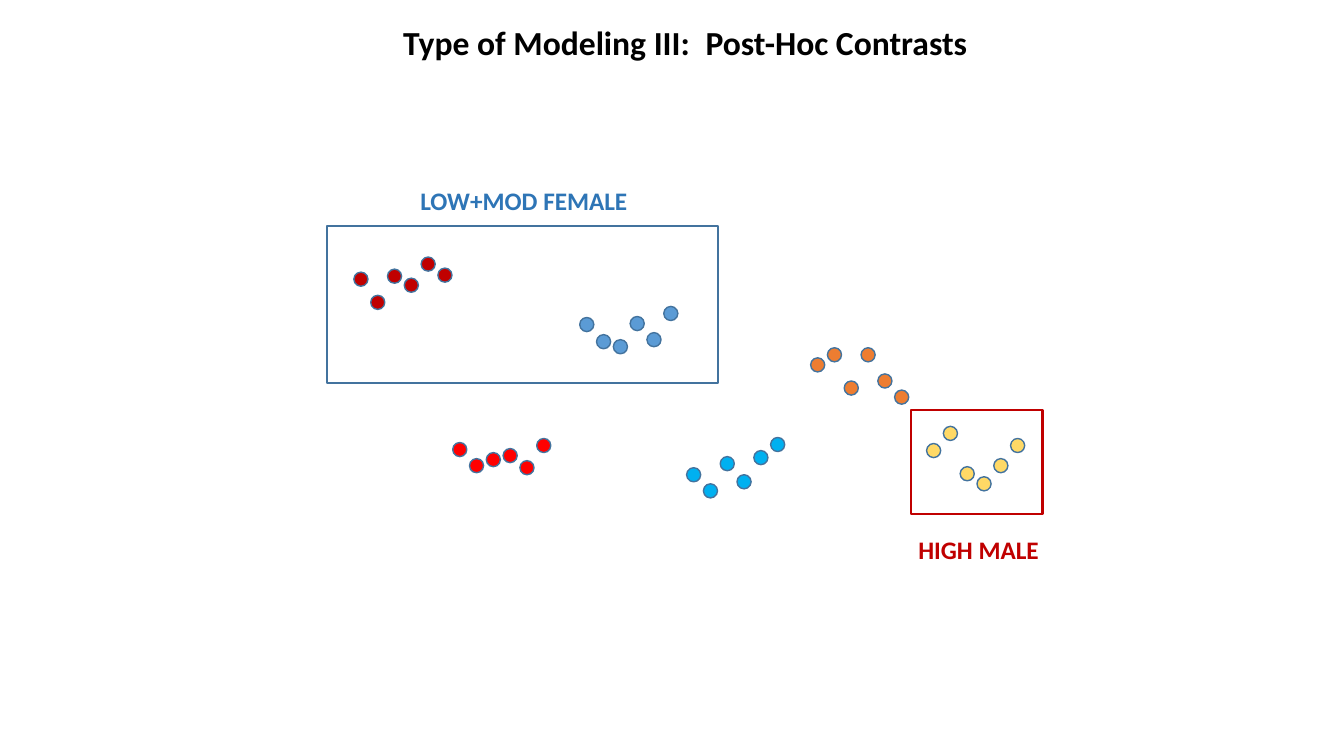
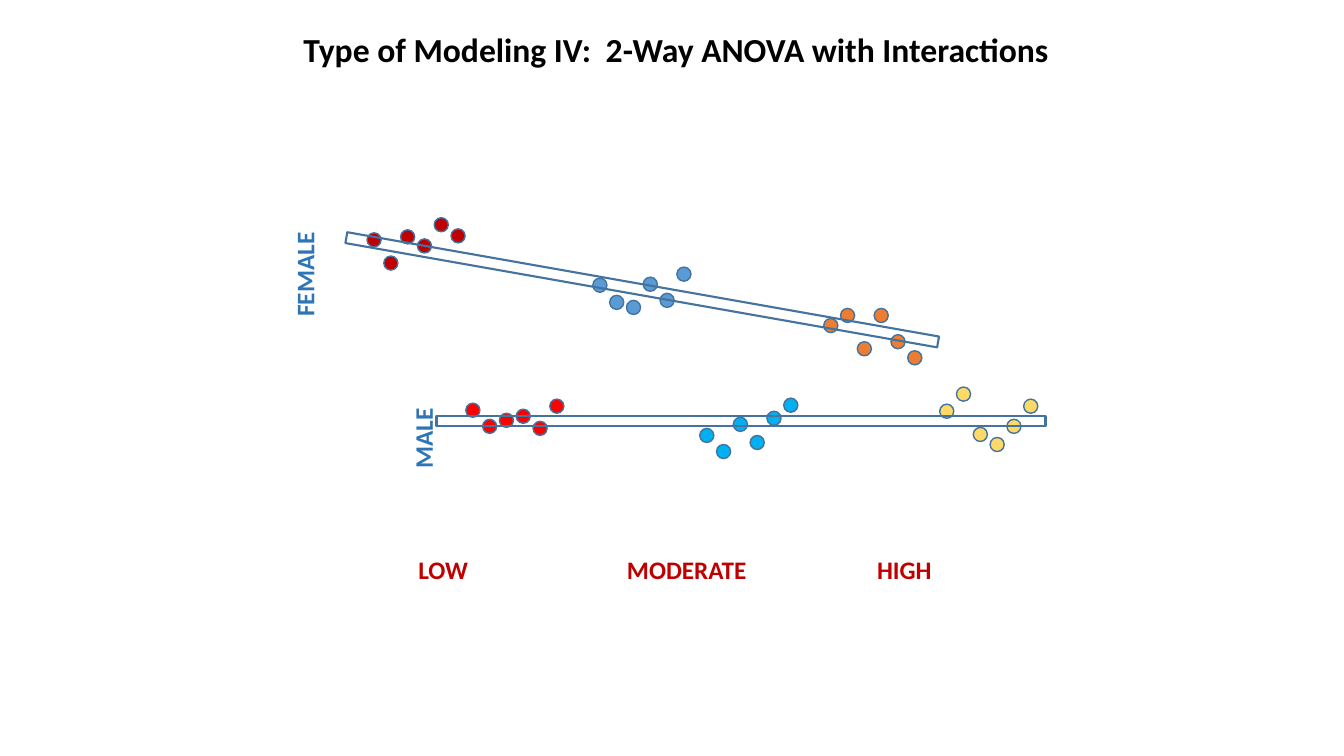
from dataclasses import dataclass

import pptx
import pptx.dml.color
import pptx.enum.shapes
import pptx.enum.text
import pptx.util
from lxml import etree
from pptx.oxml.ns import qn

Inches = pptx.util.Inches
RGBColor = pptx.dml.color.RGBColor
Shape = pptx.enum.shapes.MSO_SHAPE

FONT = "Calibri"
BLACK = RGBColor(0x00, 0x00, 0x00)
OUTLINE = RGBColor(0x43, 0x73, 0x9E)
LABEL_BLUE = RGBColor(0x2E, 0x75, 0xB6)
DARK_RED = RGBColor(0xC0, 0x00, 0x00)
RED = RGBColor(0xFF, 0x00, 0x00)
MID_BLUE = RGBColor(0x5B, 0x9B, 0xD5)
SKY_BLUE = RGBColor(0x00, 0xB0, 0xF0)
ORANGE = RGBColor(0xED, 0x7D, 0x31)
YELLOW = RGBColor(0xFF, 0xD9, 0x66)

DOT_SIZE = 0.14
DOT_STEP = 1 / 6


@dataclass(frozen=True)
class Cluster:
    color: RGBColor
    left: float
    tops: tuple[float, ...]


@dataclass(frozen=True)
class Frame:
    left: float
    top: float
    width: float
    height: float
    color: RGBColor = OUTLINE
    rotation: float = 0


@dataclass(frozen=True)
class Label:
    text: str
    left: float
    top: float
    width: float
    color: RGBColor
    height: float = 0.4
    size: int = 18
    rotation: float = 0
    wrap: bool = True
    tabs: tuple[float, ...] = ()


# Observations, evenly spaced from left to right within each cluster
CLUSTERS = (
    Cluster(MID_BLUE, 5.75, (3.15, 3.32, 3.37, 3.14, 3.3, 3.04)),
    Cluster(ORANGE, 8.04, (3.55, 3.45, 3.78, 3.45, 3.71, 3.87)),
    Cluster(DARK_RED, 3.51, (2.7, 2.93, 2.67, 2.76, 2.55, 2.66)),
    Cluster(SKY_BLUE, 6.81, (4.64, 4.8, 4.53, 4.71, 4.47, 4.34)),
    Cluster(YELLOW, 9.19, (4.4, 4.23, 4.63, 4.73, 4.55, 4.35)),
    Cluster(RED, 4.49, (4.39, 4.55, 4.49, 4.45, 4.57, 4.35)),
)


def title(text: str, left: float, top: float, width: float) -> Label:
    return Label(text, left, top, width, BLACK, height=0.5, size=24, wrap=False)


def draw_clusters(slide, dx: float = 0, dy: float = 0) -> None:
    scatter = slide.shapes.add_group_shape()
    for cluster in CLUSTERS:
        for index, top in enumerate(cluster.tops):
            dot = scatter.shapes.add_shape(
                Shape.OVAL,
                Inches(cluster.left + index * DOT_STEP + dx), Inches(top + dy),
                Inches(DOT_SIZE), Inches(DOT_SIZE))
            dot.shadow.inherit = False
            dot.fill.solid()
            dot.fill.fore_color.rgb = cluster.color
            dot.line.color.rgb = OUTLINE
            dot.line.width = pptx.util.Pt(1)


def draw_frame(slide, frame: Frame) -> None:
    outline = slide.shapes.add_shape(
        Shape.RECTANGLE, Inches(frame.left), Inches(frame.top),
        Inches(frame.width), Inches(frame.height))
    outline.shadow.inherit = False
    outline.rotation = frame.rotation
    outline.fill.background()
    outline.line.color.rgb = frame.color
    outline.line.width = pptx.util.Pt(1.5)


def draw_label(slide, label: Label) -> None:
    box = slide.shapes.add_textbox(
        Inches(label.left), Inches(label.top),
        Inches(label.width), Inches(label.height))
    box.rotation = label.rotation
    box.text_frame.word_wrap = label.wrap
    box.text_frame.auto_size = pptx.enum.text.MSO_AUTO_SIZE.SHAPE_TO_FIT_TEXT
    paragraph = box.text_frame.paragraphs[0]
    run = paragraph.add_run()
    run.text = label.text
    run.font.name = FONT
    run.font.size = pptx.util.Pt(label.size)
    run.font.bold = True
    run.font.color.rgb = label.color
    if label.tabs:
        tab_list = etree.SubElement(
            paragraph._p.get_or_add_pPr(), qn("a:tabLst"))
        for position in label.tabs:
            etree.SubElement(tab_list, qn("a:tab"),
                             pos=str(Inches(position)), algn="l")


def build_contrasts(slide) -> None:
    draw_clusters(slide)
    # Contrasted groups
    draw_frame(slide, Frame(3.24, 2.24, 3.88, 1.56))
    draw_frame(slide, Frame(9.04, 4.07, 1.3, 1.03, DARK_RED))
    for label in (
        Label("LOW+MOD FEMALE", 4.07, 1.79, 2.4, LABEL_BLUE),
        Label("HIGH MALE", 9.01, 5.25, 1.55, DARK_RED),
        title("Type of Modeling III:\tPost-Hoc Contrasts", 3.9, 0.17, 5.86),
    ):
        draw_label(slide, label)


def build_interactions(slide) -> None:
    draw_clusters(slide, dx=0.13, dy=-0.39)
    # Trend bars for female and male
    draw_frame(slide, Frame(3.39, 2.82, 5.96, 0.11, rotation=10))
    draw_frame(slide, Frame(4.33, 4.13, 6.04, 0.1))
    for label in (
        Label("FEMALE", 2.5, 2.52, 1.04, LABEL_BLUE, rotation=270, wrap=False),
        Label("MALE", 3.79, 4.14, 0.81, LABEL_BLUE, rotation=270, wrap=False),
        Label("LOW\tMODERATE\tHIGH", 4.05, 5.45, 6.49, DARK_RED,
              tabs=(2.07, 4.55)),
        title("Type of Modeling IV:\t2-Way ANOVA with Interactions",
              2.91, 0.24, 7.67),
    ):
        draw_label(slide, label)


def main() -> None:
    deck = pptx.Presentation()
    deck.slide_width = Inches(13.33)
    deck.slide_height = Inches(7.5)
    blank = deck.slide_layouts[6]
    for build in (build_contrasts, build_interactions):
        build(deck.slides.add_slide(blank))
    deck.save("out.pptx")


if __name__ == "__main__":
    main()
